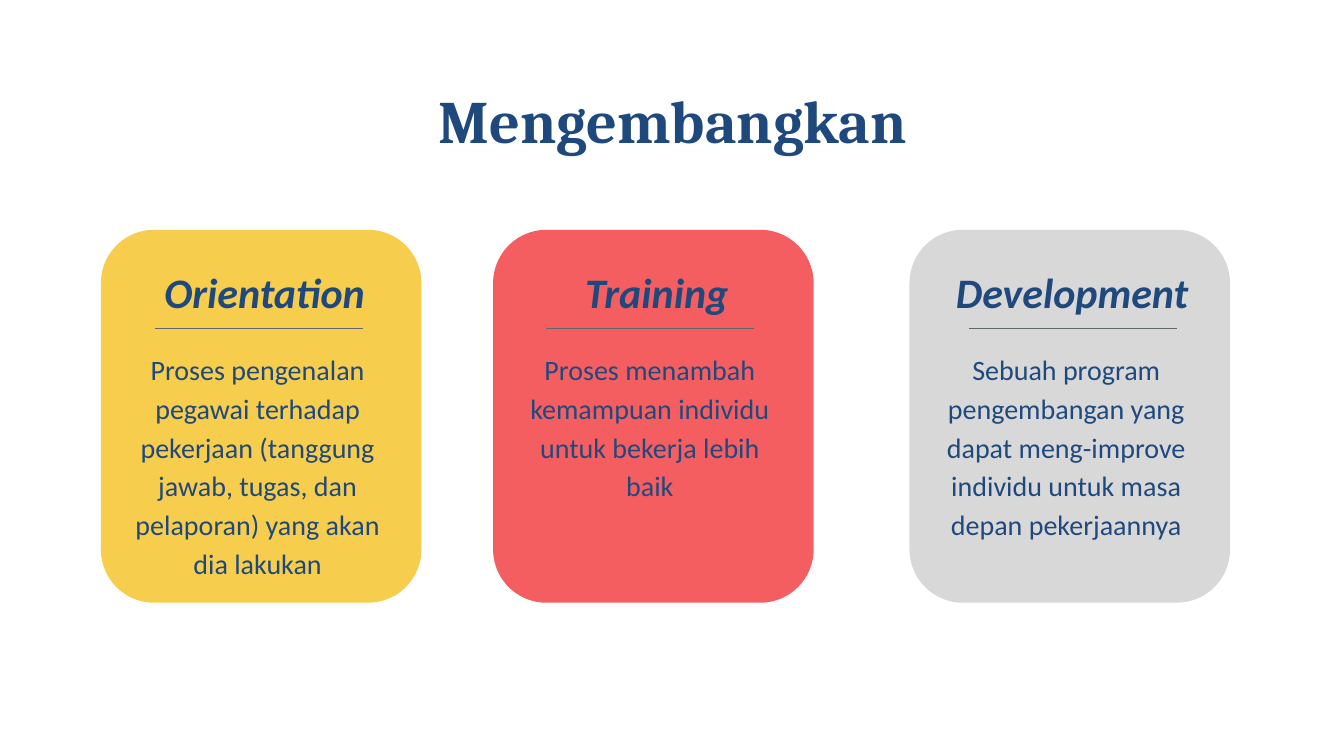
from dataclasses import dataclass

from lxml.etree import SubElement
from pptx import Presentation
from pptx.dml.color import RGBColor
from pptx.enum.shapes import MSO_CONNECTOR, MSO_SHAPE
from pptx.enum.text import MSO_ANCHOR, PP_ALIGN
from pptx.oxml.ns import qn
from pptx.util import Inches, Pt

NAVY = "1F497D"
RULE_GREY = "5E696C"
CARD_TOP, CARD_WIDTH, CARD_HEIGHT = 2.28, 3.18, 3.7
RULE_TOP, RULE_LENGTH = 3.26, 2.06


@dataclass
class Stage:
    heading: str
    description: str
    color: str
    left: float
    heading_left: float
    heading_width: float
    rule_left: float
    description_height: float


STAGES = [
    Stage("Orientation",
          "Proses pengenalan pegawai terhadap pekerjaan (tanggung jawab, "
          "tugas, dan pelaporan) yang akan dia lakukan",
          "F6CD4C", 1, 1.41, 2.43, 1.54, 2.47),
    Stage("Training",
          "Proses menambah kemampuan individu untuk bekerja lebih baik",
          "F55E61", 4.89, 5.3, 2.43, 5.42, 1.7),
    Stage("Development",
          "Sebuah program pengembangan yang dapat meng-improve individu "
          "untuk masa depan pekerjaannya",
          "D8D8D8", 9.02, 9.35, 2.57, 9.61, 2.09),
]


def rgb(value):
    return RGBColor.from_string(value)


def add_text(slide, text, left, top, width, height, size, font="Calibri",
             bold=False, italic=False, spacing=1.15, inset=0.1,
             anchor=MSO_ANCHOR.TOP):
    box = slide.shapes.add_textbox(Inches(left), Inches(top),
                                   Inches(width), Inches(height))
    frame = box.text_frame
    frame.word_wrap = True
    frame.vertical_anchor = anchor
    frame.margin_left = frame.margin_right = Inches(0.1)
    frame.margin_top = frame.margin_bottom = Inches(inset)
    paragraph = frame.paragraphs[0]
    paragraph.text = text
    paragraph.alignment = PP_ALIGN.CENTER
    paragraph.line_spacing = spacing
    paragraph.font.name = font
    paragraph.font.size = Pt(size)
    paragraph.font.bold = bold
    paragraph.font.italic = italic
    paragraph.font.color.rgb = rgb(NAVY)


def add_card(slide, left, color):
    card = slide.shapes.add_shape(
        MSO_SHAPE.ROUNDED_RECTANGLE, Inches(left), Inches(CARD_TOP),
        Inches(CARD_WIDTH), Inches(CARD_HEIGHT))
    card.shadow.inherit = False
    card.fill.solid()
    card.fill.fore_color.rgb = rgb(color)
    card.line.fill.background()


def add_rule(slide, left):
    rule = slide.shapes.add_connector(
        MSO_CONNECTOR.STRAIGHT, Inches(left), Inches(RULE_TOP),
        Inches(left + RULE_LENGTH), Inches(RULE_TOP))
    rule.line.color.rgb = rgb(RULE_GREY)
    rule.line.width = Pt(0.75)
    SubElement(rule._element.spPr, qn("a:effectLst"))


def add_stage(slide, stage):
    add_card(slide, stage.left, stage.color)
    add_text(slide, stage.heading, stage.heading_left, 2.47,
             stage.heading_width, 0.71, 30, bold=True, italic=True)
    add_text(slide, stage.description, stage.left + 0.21, 3.35,
             2.69, stage.description_height, 20)
    add_rule(slide, stage.rule_left)


def main():
    presentation = Presentation()
    presentation.slide_width = Inches(13.33)
    presentation.slide_height = Inches(7.5)
    slide = presentation.slides.add_slide(presentation.slide_layouts[6])
    add_text(slide, "Mengembangkan", 0.67, 0.56, 12, 1.25, 43,
             font="Cambria", bold=True, spacing=1.0, inset=0.06,
             anchor=MSO_ANCHOR.MIDDLE)
    for stage in STAGES:
        add_stage(slide, stage)
    presentation.save("out.pptx")


if __name__ == "__main__":
    main()
